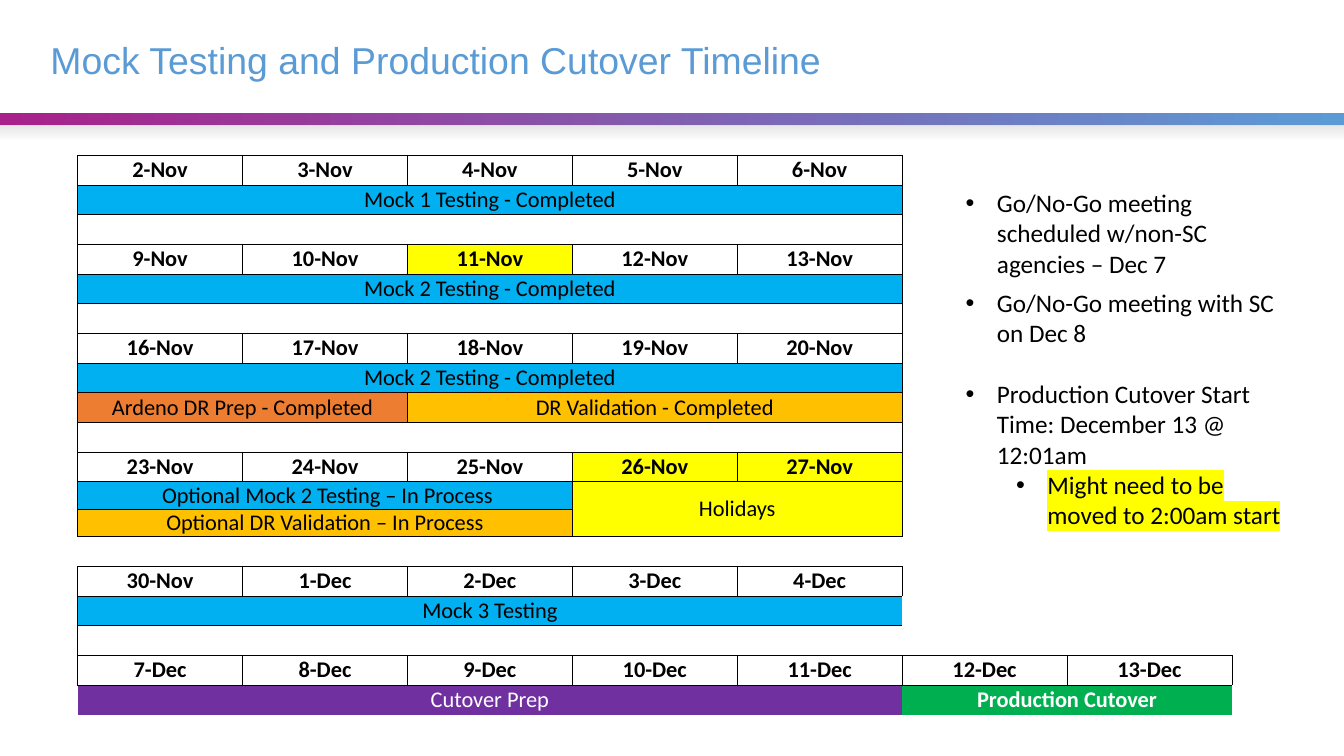
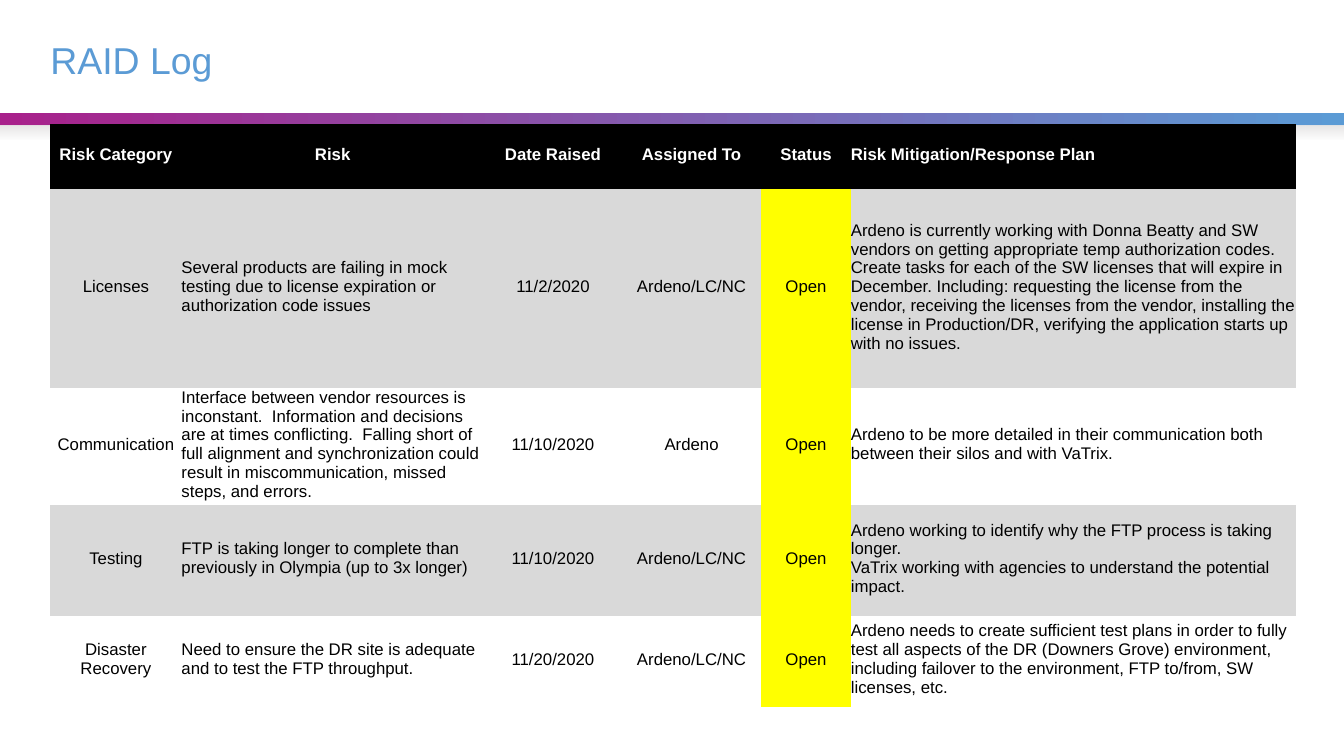
from dataclasses import dataclass

from lxml.etree import SubElement
from pptx import Presentation
from pptx.dml.color import RGBColor
from pptx.enum.shapes import MSO_SHAPE
from pptx.enum.text import MSO_ANCHOR, MSO_AUTO_SIZE, PP_ALIGN
from pptx.oxml.ns import qn
from pptx.util import Inches, Pt


@dataclass(frozen=True)
class Theme:
    magenta: str = "A8218B"
    blue: str = "5B9BD5"
    shade: str = "E7E6E6"
    black: str = "000000"
    white: str = "FFFFFF"
    yellow: str = "FFFF00"
    gray: str = "D9D9D9"
    sky: str = "00B0F0"
    orange: str = "ED7D31"
    amber: str = "FFC000"
    purple: str = "7030A0"
    green: str = "00B050"
    heading_font: str = "Arial"
    body_font: str = "Calibri"
    title_size: float = 26.7
    bullet_size: float = 18
    calendar_size: float = 16
    log_size: float = 12
    border_width: float = 0.5


@dataclass(frozen=True)
class Block:
    """One entry of the calendar, possibly spanning several cells."""
    text: str = ""
    fill: str = None
    columns: int = 5
    rows: int = 1
    edges: str = "LRTB"
    color: str = Theme.black
    bold: bool = False


def rgb(value):
    return RGBColor.from_string(value)


class Deck:
    NO_STYLE = "{2D5ABB26-0587-4C30-8999-92F81FD0307C}"

    def __init__(self, theme):
        self.theme = theme
        self.presentation = Presentation()
        self.presentation.slide_width = Inches(13.33)
        self.presentation.slide_height = Inches(7.5)
        self.slide = None

    # Slide frame: title and gradient bands
    def new_slide(self, title):
        theme = self.theme
        self.slide = self.presentation.slides.add_slide(self.presentation.slide_layouts[5])
        self.band(1.12, theme.magenta, theme.blue, 0)
        self.band(1.25, theme.shade, theme.shade, 270, fade=True)
        shape = self.slide.shapes.title
        shape.left, shape.top = Inches(0.5), Inches(0.25)
        shape.width, shape.height = Inches(12.33), Inches(0.75)
        frame = shape.text_frame
        frame.auto_size = MSO_AUTO_SIZE.NONE
        frame.vertical_anchor = MSO_ANCHOR.MIDDLE
        frame.margin_left = frame.margin_top = frame.margin_right = frame.margin_bottom = 0
        paragraph = frame.paragraphs[0]
        paragraph.alignment = PP_ALIGN.LEFT
        paragraph.line_spacing = Pt(theme.title_size)
        self.run(paragraph, title, theme.title_size, theme.heading_font, theme.blue)

    def band(self, top, start, end, angle, fade=False):
        shape = self.slide.shapes.add_shape(
            MSO_SHAPE.RECTANGLE, 0, Inches(top), self.presentation.slide_width, Inches(0.13))
        shape.shadow.inherit = False
        shape.line.fill.background()
        shape.fill.gradient()
        shape.fill.gradient_angle = angle
        stops = shape.fill.gradient_stops
        for stop, color in zip(stops, (start, end)):
            stop.color.rgb = rgb(color)
        if fade:
            colors = list(shape._element.spPr.iter(qn("a:srgbClr")))
            SubElement(colors[-1], qn("a:alpha"), val="0")

    # Text
    def run(self, paragraph, text, size, font, color, bold=False, highlight=None):
        run = paragraph.add_run()
        run.text = text
        run.font.size = Pt(size)
        run.font.bold = bold
        run.font.color.rgb = rgb(color)
        if highlight:
            mark = SubElement(run.font._element, qn("a:highlight"))
            SubElement(mark, qn("a:srgbClr"), val=highlight)
        run.font.name = font

    def bullets(self, top, height, items):
        """Each item is text, level, points of space before, highlight colour."""
        theme = self.theme
        box = self.slide.shapes.add_textbox(
            Inches(9.48), Inches(top), Inches(3.36), Inches(height))
        frame = box.text_frame
        frame.word_wrap = True
        for index, (text, level, space, highlight) in enumerate(items):
            paragraph = frame.add_paragraph() if index else frame.paragraphs[0]
            paragraph.level = level
            if space:
                paragraph.space_before = Pt(space)
            properties = paragraph._p.get_or_add_pPr()
            properties.set("marL", str(Inches(0.31 + 0.5 * level)))
            properties.set("indent", str(-Inches(0.31)))
            SubElement(properties, qn("a:buFont"), typeface=theme.heading_font)
            SubElement(properties, qn("a:buChar"), char="•")
            self.run(paragraph, text, theme.bullet_size, theme.body_font, theme.black,
                     highlight=highlight)

    # Tables
    def table(self, left, top, widths, heights):
        frame = self.slide.shapes.add_table(
            len(heights), len(widths), Inches(left), Inches(top),
            Inches(sum(widths)), Inches(sum(heights)))
        table = frame.table
        table.first_row = table.horz_banding = False
        table._tbl.tblPr.find(qn("a:tableStyleId")).text = self.NO_STYLE
        for column, width in zip(table.columns, widths):
            column.width = Inches(width)
        for row, height in zip(table.rows, heights):
            row.height = Inches(height)
        return table

    def format_cell(self, cell, fill=None, bottom=0.0):
        cell.margin_left = cell.margin_top = cell.margin_right = 0
        cell.margin_bottom = Inches(bottom)
        cell.vertical_anchor = MSO_ANCHOR.MIDDLE
        if fill:
            cell.fill.solid()
            cell.fill.fore_color.rgb = rgb(fill)
        else:
            cell.fill.background()

    def borders(self, cell, edges):
        properties = cell._tc.get_or_add_tcPr()
        for index, edge in enumerate(edges):
            line = SubElement(properties, qn("a:ln" + edge),
                              w=str(Pt(self.theme.border_width)))
            SubElement(SubElement(line, qn("a:solidFill")), qn("a:srgbClr"),
                       val=self.theme.black)
            properties.insert(index, line)

    def calendar(self, left, top, widths, heights, rows):
        theme = self.theme
        table = self.table(left, top, widths, heights)
        for cell in table.iter_cells():
            self.format_cell(cell)
            SubElement(cell.text_frame.paragraphs[0]._p, qn("a:endParaRPr"),
                       sz=str(theme.calendar_size * 100))
        for row, blocks in enumerate(rows):
            column = 0
            for block in blocks:
                cell = table.cell(row, column)
                last_row, last_column = row + block.rows, column + block.columns
                if block.rows * block.columns > 1:
                    cell.merge(table.cell(last_row - 1, last_column - 1))
                for y in range(row, last_row):
                    for x in range(column, last_column):
                        self.format_cell(table.cell(y, x), block.fill)
                        self.borders(table.cell(y, x), block.edges)
                if block.text:
                    paragraph = cell.text_frame.paragraphs[0]
                    paragraph.alignment = PP_ALIGN.CENTER
                    self.run(paragraph, block.text, theme.calendar_size, theme.body_font,
                             block.color, block.bold)
                column = last_column

    def log(self, left, top, widths, heights, rows, left_aligned, status_column):
        """A cell is text or a tuple of paragraphs; a newline is a line break."""
        theme = self.theme
        table = self.table(left, top, widths, heights)
        for y, row in enumerate(rows):
            header = y == 0
            row_fill = theme.black if header else theme.gray if y % 2 else None
            for x, content in enumerate(row):
                cell = table.cell(y, x)
                status = x == status_column and not header
                self.format_cell(cell, theme.yellow if status else row_fill, bottom=0.04)
                texts = (content,) if isinstance(content, str) else content
                aligned_left = x in left_aligned[header]
                for index, text in enumerate(texts):
                    frame = cell.text_frame
                    paragraph = frame.add_paragraph() if index else frame.paragraphs[0]
                    paragraph.alignment = PP_ALIGN.LEFT if aligned_left else PP_ALIGN.CENTER
                    for number, line in enumerate(text.split("\n")):
                        if number:
                            paragraph.add_line_break()
                        self.run(paragraph, line, theme.log_size, theme.heading_font,
                                 theme.white if header else theme.black, header)


def week(month_days, holidays=()):
    return [Block(day, Theme.yellow if day in holidays else None, 1, bold=True)
            for day in month_days.split()]


def timeline_slide(deck):
    theme = deck.theme
    deck.new_slide("Mock Testing and Production Cutover Timeline")
    gap = [Block()]
    mock_2 = [Block("Mock 2 Testing - Completed", theme.sky)]
    rows = [
        week("2-Nov 3-Nov 4-Nov 5-Nov 6-Nov"),
        [Block("Mock 1 Testing - Completed", theme.sky)],
        gap,
        week("9-Nov 10-Nov 11-Nov 12-Nov 13-Nov", ["11-Nov"]),
        mock_2,
        gap,
        week("16-Nov 17-Nov 18-Nov 19-Nov 20-Nov"),
        mock_2,
        [Block("Ardeno DR Prep - Completed", theme.orange, 2),
         Block("DR Validation - Completed", theme.amber, 3)],
        gap,
        week("23-Nov 24-Nov 25-Nov 26-Nov 27-Nov", ["26-Nov", "27-Nov"]),
        [Block(" Optional Mock 2 Testing – In Process", theme.sky, 3),
         Block("Holidays", theme.yellow, 2, rows=2)],
        [Block("Optional DR Validation – In Process", theme.amber, 3)],
        [Block(edges="TB")],
        week("30-Nov 1-Dec 2-Dec 3-Dec 4-Dec"),
        [Block("Mock 3 Testing", theme.sky, edges="LT")],
        [Block(edges="LB"), Block(columns=1, edges="B"), Block(columns=1, edges="B")],
        week("7-Dec 8-Dec 9-Dec 10-Dec 11-Dec 12-Dec 13-Dec"),
        [Block("Cutover Prep", theme.purple, edges="T", color=theme.white),
         Block("Production Cutover", theme.green, 2, edges="T", color=theme.white, bold=True)],
    ]
    # The two rows beside the holidays are tighter; the others share the rest
    tight = 0.27
    regular = (5.55 - 2 * tight) / (len(rows) - 2)
    heights = [tight if y in (11, 12) else regular for y in range(len(rows))]
    deck.calendar(0.77, 1.54, [11.45 / 7] * 7, heights, rows)

    # Meeting notes
    deck.bullets(1.81, 1.01, [
        ("Go/No-Go meeting scheduled w/non-SC agencies – Dec 7", 0, 0, None)])
    deck.bullets(2.8, 2.83, [
        ("Go/No-Go meeting with SC on Dec 8", 0, 0, None),
        ("Production Cutover Start Time: December 13 @ 12:01am", 0, 22, None),
        ("Might need to be moved to 2:00am start", 1, 0, theme.yellow)])


def raid_slide(deck):
    deck.new_slide("RAID Log")
    rows = [
        ("Risk Category", "Risk", "Date Raised", "Assigned To", "Status",
         "Risk Mitigation/Response Plan"),
        ("Licenses",
         "Several products are failing in mock testing due to license expiration or "
         "authorization code issues",
         "11/2/2020", "Ardeno/LC/NC", "Open",
         "Ardeno is currently working with Donna Beatty and SW vendors on getting "
         "appropriate temp authorization codes. \nCreate tasks for each of the SW licenses "
         "that will expire in December. Including: requesting the license from the vendor, "
         "receiving the licenses from the vendor, installing the license in Production/DR, "
         "verifying the application starts up with no issues."),
        ("Communication",
         "Interface between vendor resources is inconstant.  Information and decisions are "
         "at times conflicting.  Falling short of full alignment and synchronization could "
         "result in miscommunication, missed steps, and errors.",
         "11/10/2020", "Ardeno", "Open",
         "Ardeno to be more detailed in their communication both between their silos and "
         "with VaTrix."),
        ("Testing",
         "FTP is taking longer to complete than previously in Olympia (up to 3x longer)",
         "11/10/2020", "Ardeno/LC/NC", "Open",
         ("Ardeno working to identify why the FTP process is taking longer.",
          "VaTrix working with agencies to understand the potential impact.")),
        ("Disaster Recovery",
         "Need to ensure the DR site is adequate and to test the FTP throughput.",
         "11/20/2020", "Ardeno/LC/NC", "Open",
         "Ardeno needs to create sufficient test plans in order to fully test all aspects of "
         "the DR (Downers Grove) environment, including failover to the environment, FTP "
         "to/from, SW licenses, etc."),
    ]
    deck.log(0.5, 1.23, [1.3, 3, 1.37, 1.38, 0.89, 4.41], [0.65, 1.97, 1.16, 1.1, 0.9],
             rows, left_aligned={True: (5,), False: (1, 5)}, status_column=4)


def main():
    deck = Deck(Theme())
    timeline_slide(deck)
    raid_slide(deck)
    deck.presentation.save("out.pptx")


if __name__ == "__main__":
    main()
